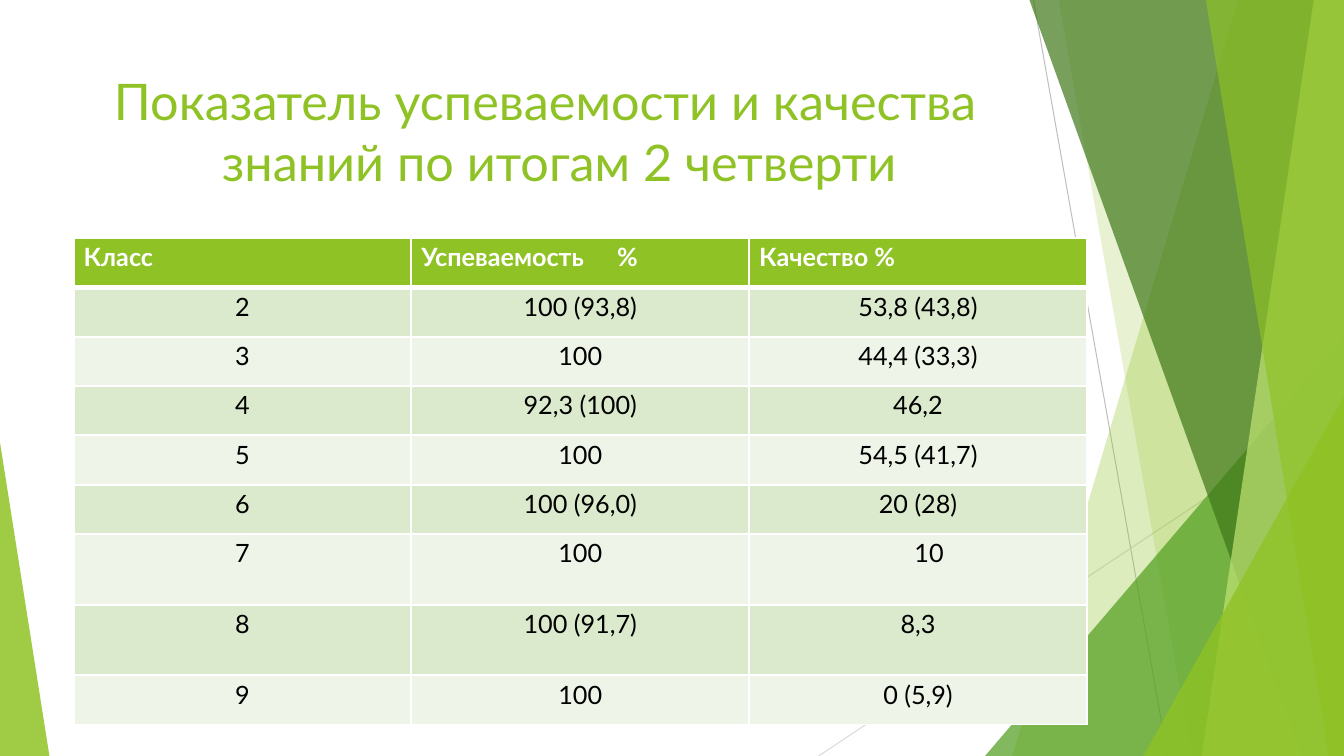
"""Build the slide with pass rates and quality of knowledge by class."""
import dataclasses
import typing

import lxml.etree
import pptx
import pptx.dml.color
import pptx.enum.shapes
import pptx.enum.text
import pptx.oxml
import pptx.oxml.ns
import pptx.util

Inches = pptx.util.Inches
Pt = pptx.util.Pt
Point = tuple[float, float]
CENTER = pptx.enum.text.PP_ALIGN.CENTER
LEFT = pptx.enum.text.PP_ALIGN.LEFT
WIDTH, HEIGHT = 13.33, 7.5
GREEN, WHITE, BLACK = "8FC225", "FFFFFF", "000000"
BANDS = ("DBE9CD", "EEF4E8")
FONT = "Lato"


@dataclasses.dataclass(frozen=True)
class Facet:
    """Translucent polygon of the background."""
    points: tuple[Point, ...]
    color: str
    opacity: int


@dataclasses.dataclass(frozen=True)
class Ray:
    """Thin straight line of the background."""
    start: Point
    end: Point
    color: str


def right_facet(top: tuple[Point, ...], bottom_x: float, color: str, opacity: int) -> Facet:
    """Return a facet that closes along the right slide edge."""
    return Facet((*top, (bottom_x, HEIGHT), (WIDTH, HEIGHT)), color, opacity)


RAYS = (
    Ray((10.25, 0), (11.58, HEIGHT), "BEBEBE"),
    Ray((WIDTH, 4.03), (8.12, HEIGHT), "D9D9D9"),
)
FACETS = (
    right_facet(((WIDTH, 0), (12.28, 0)), 10.04, GREEN, 30),
    right_facet(((WIDTH, 0), (10.5, 0)), 11.82, GREEN, 20),
    right_facet(((WIDTH, 3.33),), 9.77, "539F20", 72),
    right_facet(((WIDTH, 0), (10.21, 0)), 12.91, "3F7818", 70),
    right_facet(((WIDTH, 0), (13.03, 0)), 11.92, "C0E474", 70),
    right_facet(((WIDTH, 0), (11.96, 0)), 13.18, GREEN, 65),
    right_facet(((WIDTH, 3.93),), 11.34, GREEN, 80),
    Facet(((0, 4.39), (0, HEIGHT), (0.49, HEIGHT)), GREEN, 85),
)
TITLE = "Показатель успеваемости и качества знаний по итогам 2 четверти"
ROWS = (
    ("Класс", "Успеваемость\t%", "Качество %"),
    ("2", "100 (93,8)", "53,8 (43,8)"),
    ("3", "100", "44,4 (33,3)"),
    ("4", "92,3 (100)", "46,2"),
    ("5", "100", "54,5 (41,7)"),
    ("6", "100 (96,0)", "20 (28)"),
    ("7", "100", "10"),
    ("8", "100 (91,7)", "8,3"),
    ("9", "100", "0 (5,9)"),
)
ROW_HEIGHT, TALL_ROW_HEIGHT, TALL_ROWS = 0.49, 0.7, (6, 7)
COLUMN_WIDTH = 3.35
SHIFTED_CELL, SHIFT = (6, 2), 0.22


def rgb(color: str) -> pptx.dml.color.RGBColor:
    """Turn a hex string into a colour."""
    return pptx.dml.color.RGBColor.from_string(color)


def apply_format(target: typing.Any, values: dict[str, typing.Any]) -> None:
    """Set every named attribute on the target."""
    for name, value in values.items():
        setattr(target, name, value)


def paint(fill: typing.Any, color: str) -> None:
    """Give a fill one solid colour."""
    fill.solid()
    fill.fore_color.rgb = rgb(color)


def add_child(parent: typing.Any, tag: str, **attributes: str) -> typing.Any:
    """Append a DrawingML element."""
    return lxml.etree.SubElement(parent, pptx.oxml.ns.qn(tag), attributes)


def draw_ray(slide: typing.Any, ray: Ray) -> None:
    """Draw one thin background line."""
    ends = [Inches(value) for value in (*ray.start, *ray.end)]
    connector = slide.shapes.add_connector(pptx.enum.shapes.MSO_CONNECTOR.STRAIGHT, *ends)
    connector.line.width = Pt(0.72)
    connector.line.color.rgb = rgb(ray.color)
    add_child(connector._element.spPr, "a:effectLst")


def draw_facet(slide: typing.Any, facet: Facet) -> None:
    """Draw one translucent polygon."""
    points = [(Inches(x), Inches(y)) for x, y in facet.points]
    builder = slide.shapes.build_freeform(*points[0])
    builder.add_line_segments(points[1:], close=True)
    shape = builder.convert_to_shape()
    shape.shadow.inherit = False
    shape.line.fill.background()
    paint(shape.fill, facet.color)
    color = shape._element.spPr.find(".//" + pptx.oxml.ns.qn("a:srgbClr"))
    add_child(color, "a:alpha", val=str(facet.opacity * 1000))


def write(paragraph: typing.Any, text: str, size: float, color: str,
          paragraph_format: dict[str, typing.Any], bold: bool = False) -> None:
    """Write one formatted run."""
    apply_format(paragraph, paragraph_format)
    run = paragraph.add_run()
    run.text = text
    apply_format(run.font, {"name": FONT, "size": Pt(size), "bold": bold})
    run.font.color.rgb = rgb(color)


def draw_title(slide: typing.Any) -> None:
    """Draw the title with its hanging indent."""
    box = slide.shapes.add_textbox(Inches(1.12), Inches(0.69), Inches(8.64), Inches(1.23))
    apply_format(box.text_frame, {
        "word_wrap": True, "margin_left": 0, "margin_right": 0,
        "margin_top": Inches(0.01), "margin_bottom": 0,
    })
    paragraph = box.text_frame.paragraphs[0]
    write(paragraph, TITLE, 36, GREEN, {"space_before": Pt(1)})
    properties = paragraph._p.get_or_add_pPr()
    properties.set("marL", str(Inches(1.08)))
    properties.set("indent", str(Inches(-1.07)))


def set_borders(cell: typing.Any, widths: dict[str, float]) -> None:
    """Give a cell white borders ahead of its fill."""
    properties = cell._tc.get_or_add_tcPr()
    for position, (side, width) in enumerate(widths.items()):
        line = pptx.oxml.ns.qn(f"a:ln{side}")
        border = lxml.etree.Element(line, {"w": str(Pt(width))})
        add_child(add_child(border, "a:solidFill"), "a:srgbClr", val=WHITE)
        properties.insert(position, border)


def fill_cell(cell: typing.Any, row: int, column: int, text: str) -> None:
    """Format and write one table cell."""
    header = row == 0
    left = 0.1 if header else SHIFT if (row, column) == SHIFTED_CELL else 0
    apply_format(cell, {
        "margin_left": Inches(left), "margin_right": 0,
        "margin_top": Inches(0.04), "margin_bottom": 0,
    })
    paint(cell.fill, GREEN if header else BANDS[(row - 1) % 2])
    set_borders(cell, {"L": 1.5, "R": 1.5, "T": 4.25 if row == 1 else 1.5,
                       "B": 4.25 if header else 1.5})
    paragraph = cell.text_frame.paragraphs[0]
    write(paragraph, text, 18, WHITE if header else BLACK,
          {"alignment": LEFT if header else CENTER, "space_before": Pt(3.2)}, header)
    if "\t" in text:
        tabs = add_child(paragraph._p.get_or_add_pPr(), "a:tabLst")
        add_child(tabs, "a:tab", pos=str(Inches(1.94)), algn="l")


def draw_table(slide: typing.Any) -> None:
    """Draw the table of results."""
    heights = [TALL_ROW_HEIGHT if row in TALL_ROWS else ROW_HEIGHT for row in range(len(ROWS))]
    columns = len(ROWS[0])
    table = slide.shapes.add_table(
        len(ROWS), columns, Inches(0.73), Inches(2.36),
        Inches(columns * COLUMN_WIDTH), Inches(sum(heights))).table
    for column in table.columns:
        column.width = Inches(COLUMN_WIDTH)
    for row, (height, texts) in enumerate(zip(heights, ROWS)):
        table.rows[row].height = Inches(height)
        for column, text in enumerate(texts):
            fill_cell(table.cell(row, column), row, column, text)


def main() -> None:
    """Create and save the presentation."""
    presentation = pptx.Presentation()
    apply_format(presentation, {"slide_width": Inches(WIDTH), "slide_height": Inches(HEIGHT)})
    slide = presentation.slides.add_slide(presentation.slide_layouts[6])
    for ray in RAYS:
        draw_ray(slide, ray)
    for facet in FACETS:
        draw_facet(slide, facet)
    draw_title(slide)
    draw_table(slide)
    presentation.save("out.pptx")


if __name__ == "__main__":
    main()
